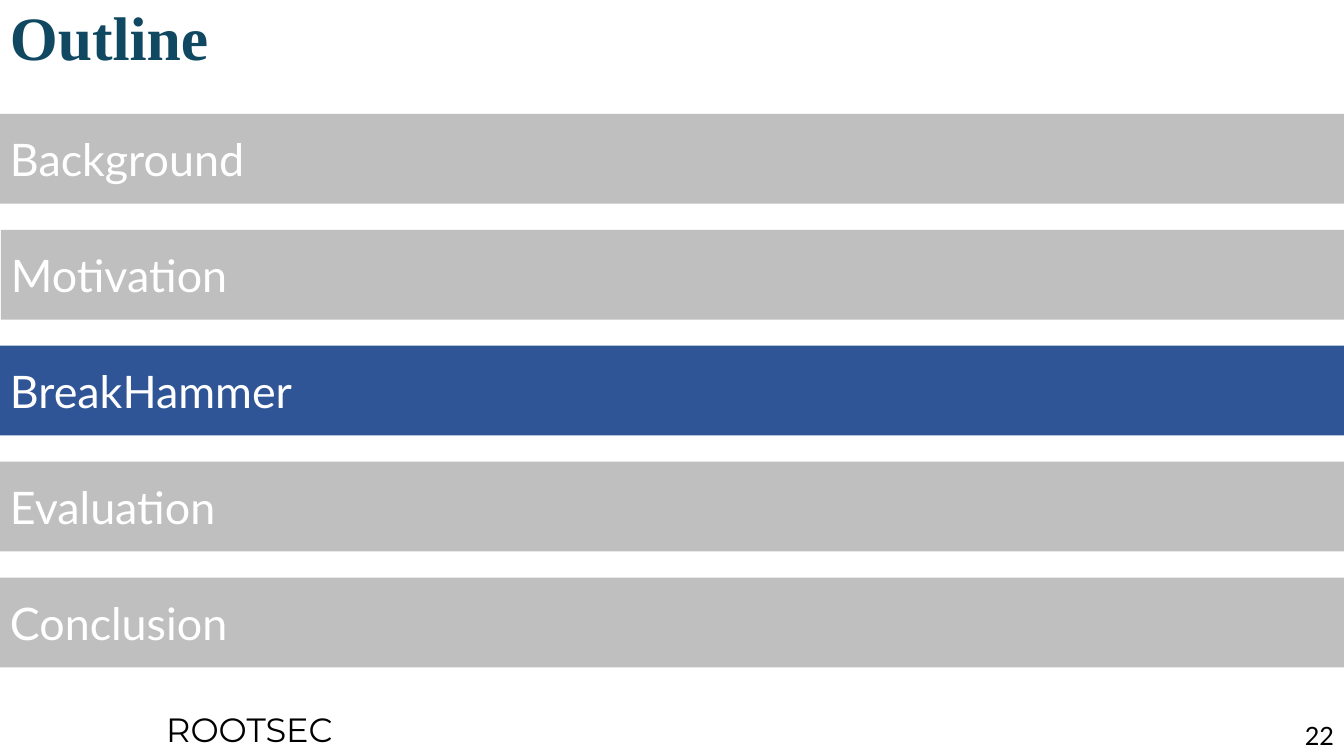
from pptx import Presentation
from pptx.dml.color import RGBColor
from pptx.enum.shapes import MSO_SHAPE
from pptx.enum.text import MSO_ANCHOR, PP_ALIGN
from pptx.util import Inches, Pt

COLORS = {
    "title": "104862",
    "muted": "BFBFBF",
    "current": "2F5597",
    "light": "FFFFFF",
    "dark": "000000",
}
SLIDE_W, SLIDE_H = 13.33, 7.5
SECTIONS = ["Background", "Motivation", "BreakHammer", "Evaluation", "Conclusion"]
CURRENT = "BreakHammer"
BAR_H, BAR_PITCH = 0.89, 1.15
NUDGE = {"Motivation": 0.01}


def rgb(name):
    return RGBColor.from_string(COLORS[name])


def write(sp, text, font, size, color, bold=False, align=PP_ALIGN.LEFT,
          anchor=MSO_ANCHOR.MIDDLE, wrap=True):
    tf = sp.text_frame
    tf.word_wrap = wrap
    tf.vertical_anchor = anchor
    p = tf.paragraphs[0]
    p.text = text
    p.alignment = align
    p.font.name = font
    p.font.size = Pt(size)
    p.font.bold = bold
    p.font.color.rgb = rgb(color)
    return p


def add_title(s, left, top, width, height):
    sp = s.shapes.add_textbox(Inches(left), Inches(top), Inches(width), Inches(height))
    p = write(sp, "Outline", "Times New Roman", 44, "title", bold=True)
    p.line_spacing = 0.9


def add_sections(s, left, top, width):
    for i, name in enumerate(SECTIONS):
        dx = NUDGE.get(name, 0)
        sp = s.shapes.add_shape(
            MSO_SHAPE.RECTANGLE, Inches(left + dx), Inches(top + i * BAR_PITCH),
            Inches(width - dx), Inches(BAR_H))
        sp.shadow.inherit = False
        sp.fill.solid()
        sp.fill.fore_color.rgb = rgb("current" if name == CURRENT else "muted")
        sp.line.fill.background()
        write(sp, name, "Lato", 32, "light")


def add_footer(s, left, top, width):
    group = s.shapes.add_textbox(
        Inches(left + 1.55), Inches(top), Inches(1.91), Inches(0.5))
    write(group, "ROOTSEC", "Montserrat", 24, "dark",
          anchor=MSO_ANCHOR.TOP, wrap=False)
    number = s.shapes.add_textbox(
        Inches(left + width - 0.75), Inches(top + 0.12), Inches(0.75), Inches(0.4))
    write(number, "22", "Lato", 18, "dark",
          align=PP_ALIGN.RIGHT, anchor=MSO_ANCHOR.TOP)


def main():
    prs = Presentation()
    prs.slide_width = Inches(SLIDE_W)
    prs.slide_height = Inches(SLIDE_H)
    s = prs.slides.add_slide(prs.slide_layouts[6])
    add_title(s, 0, 0, SLIDE_W, 0.8)
    add_sections(s, 0, 1.13, SLIDE_W)
    add_footer(s, 0, 6.98, SLIDE_W)
    prs.save("out.pptx")


if __name__ == "__main__":
    main()
